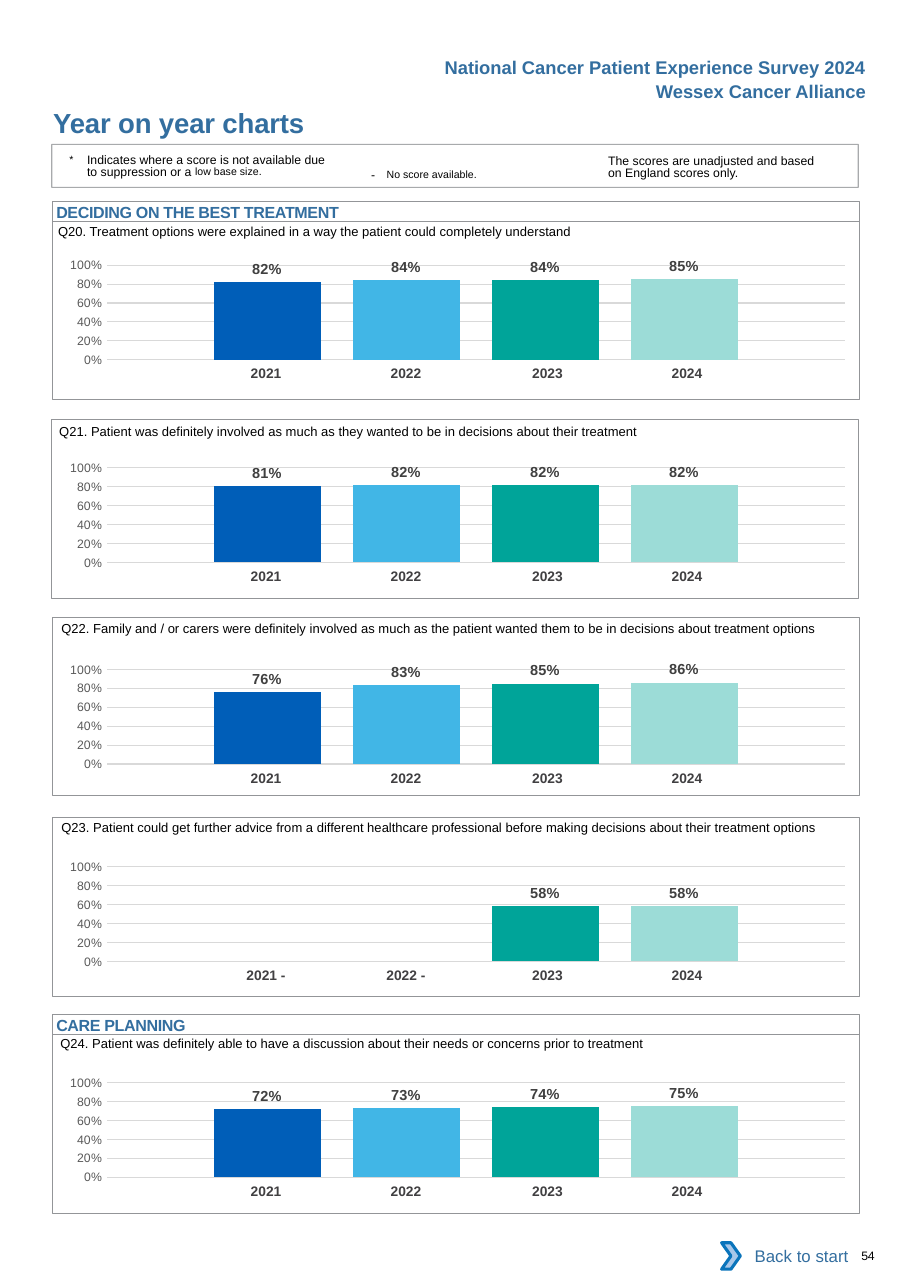
from dataclasses import dataclass
from typing import Optional

from pptx import Presentation, util as u
from pptx.chart.data import CategoryChartData
from pptx.dml.color import RGBColor
from pptx.enum import chart as charts, shapes, text
from pptx.oxml import parse_xml
from pptx.oxml.ns import nsdecls, qn

PAGE_WIDTH, PAGE_HEIGHT = u.Inches(8.26), u.Inches(11.69)
COLUMN, ROW = PAGE_WIDTH / 100, PAGE_HEIGHT / 100

BLACK = RGBColor(0, 0, 0)
WHITE = RGBColor(255, 255, 255)
HEADING = RGBColor(0x33, 0x6E, 0x9F)
FRAME = RGBColor(0x93, 0x95, 0x98)
YEAR = RGBColor(0x41, 0x40, 0x42)
LABEL = RGBColor(0x40, 0x40, 0x40)
AXIS = RGBColor(0x59, 0x59, 0x59)
GRID = RGBColor(0xD9, 0xD9, 0xD9)
CHEVRON_FILL = RGBColor(0xA8, 0xC7, 0xE9)
CHEVRON_LINE = RGBColor(0x0A, 0x74, 0xBB)
BARS = (RGBColor(0x00, 0x5E, 0xB8), RGBColor(0x41, 0xB6, 0xE6),
        RGBColor(0x00, 0xA4, 0x99), RGBColor(0x9C, 0xDC, 0xD7))

PANEL_WIDTH = 88.62
YEAR_COLUMNS = ((15.38, 0), (15.38, 0), (16.22, 3), (15.38, 8.6))
YEARS = ("2021", "2022", "2023", "2024")
NO_TABLE_STYLE = "{2D5ABB26-0587-4C30-8999-92F81FD0307C}"


@dataclass(frozen=True)
class Area:
    left: float
    top: float
    width: float
    height: float

    def emu(self) -> tuple[int, int, int, int]:
        return (round(self.left * COLUMN), round(self.top * ROW),
                round(self.width * COLUMN), round(self.height * ROW))


@dataclass(frozen=True)
class Span:
    text: str
    size: float
    bold: bool = False
    color: RGBColor = BLACK
    spacing: float = 0
    baseline: int = 0


@dataclass(frozen=True)
class Question:
    wording: str
    scores: tuple[Optional[float], ...]
    left: float
    top: float
    panel_left: float
    panel_top: float
    chart_top: float
    years: tuple[str, ...] = YEARS


QUESTIONS = (
    Question("Q20. Treatment options were explained in a way the patient could completely understand",
             (0.82, 0.84, 0.84, 0.85), 6.3, 16.6, 5.81, 17.19, 18.99),
    Question("Q21. Patient was definitely involved as much as they wanted to be in decisions about their treatment",
             (0.81, 0.82, 0.82, 0.82), 6.42, 32.08, 5.69, 32.59, 34.73),
    Question("Q22. Family and / or carers were definitely involved as much as the patient wanted them to be in "
             "decisions about treatment options",
             (0.76, 0.83, 0.85, 0.86), 6.66, 47.39, 5.81, 47.9, 50.38),
    Question("Q23. Patient could get further advice from a different healthcare professional before making "
             "decisions about their treatment options",
             (None, None, 0.58, 0.58), 6.66, 62.87, 5.81, 63.47, 65.7,
             ("2021 -", "2022 -", "2023", "2024")),
    Question("Q24. Patient was definitely able to have a discussion about their needs or concerns prior to treatment",
             (0.72, 0.73, 0.74, 0.75), 6.54, 79.64, 5.81, 80.33, 82.46),
)
SECTIONS = (("DECIDING ON THE BEST TREATMENT", 15.65), ("CARE PLANNING", 78.79))
BANNERS = (
    ("National Cancer Patient Experience Survey 2024", Area(47.46, 3.93, 48.91, 2.57)),
    ("Wessex Cancer Alliance", Area(70.58, 5.82, 25.79, 2.57)),
)


def style(font, size: float, color: RGBColor, bold: bool = False) -> None:
    font.name, font.size, font.bold = "Arial", u.Pt(size), bold
    font.color.rgb = color


def write(frame, spans: tuple[Span, ...], insets=(0, 0, 0, 0), align=text.PP_ALIGN.LEFT,
          anchor=text.MSO_ANCHOR.TOP, wrap=True, before: float = 0, line: Optional[float] = None,
          margin: float = 0, hanging: float = 0) -> None:
    frame.word_wrap, frame.vertical_anchor = wrap, anchor
    frame.auto_size = text.MSO_AUTO_SIZE.NONE
    frame.margin_left, frame.margin_top, frame.margin_right, frame.margin_bottom = map(u.Pt, insets)
    para = frame.paragraphs[0]
    para.alignment, para.space_before = align, u.Pt(before)
    if line:
        para.line_spacing = u.Pt(line)
    properties = para._p.get_or_add_pPr()
    properties.set("marL", str(u.Pt(margin)))
    properties.set("indent", str(u.Pt(-hanging)))
    for span in spans:
        run = para.add_run()
        run.text = span.text
        style(run.font, span.size, span.color, span.bold)
        run_properties = run._r.get_or_add_rPr()
        if span.spacing:
            run_properties.set("spc", str(round(span.spacing * 100)))
        if span.baseline:
            run_properties.set("baseline", str(span.baseline * 1000))


def add_text(page, area: Area, *spans: Span, **layout) -> None:
    write(page.shapes.add_textbox(*area.emu()).text_frame, spans, **layout)


def add_box(page, area: Area, line: Optional[RGBColor] = FRAME, weight: float = 0.5,
            fill: Optional[RGBColor] = None, kind=shapes.MSO_SHAPE.RECTANGLE):
    box = page.shapes.add_shape(kind, *area.emu())
    box.shadow.inherit = False
    if fill is None:
        box.fill.background()
    else:
        box.fill.solid()
        box.fill.fore_color.rgb = fill
    if line is None:
        box.line.fill.background()
    else:
        box.line.color.rgb, box.line.width = line, u.Pt(weight)
    return box


def add_scores(page, question: Question) -> None:
    data = CategoryChartData(number_format="0%")
    data.categories = ["1"]
    for number, score in enumerate(question.scores, 1):
        data.add_series(f"Series {number}", [score])
    area = Area(4.72, question.chart_top, PANEL_WIDTH, 11.04)
    chart = page.shapes.add_chart(charts.XL_CHART_TYPE.COLUMN_CLUSTERED, *area.emu(), data).chart
    chart.has_legend = chart.has_title = False
    chart.font.name, chart.font.size = "Calibri", u.Pt(10)
    chart.font.color.rgb = BLACK
    chart.category_axis.visible = False
    axis = chart.value_axis
    axis.minimum_scale, axis.maximum_scale, axis.major_unit = 0, 1, 0.2
    axis.major_tick_mark = axis.minor_tick_mark = charts.XL_TICK_MARK.NONE
    axis.format.line.fill.background()
    axis.major_gridlines.format.line.color.rgb = GRID
    axis.major_gridlines.format.line.width = u.Pt(0.75)
    axis.tick_labels.number_format, axis.tick_labels.number_format_is_linked = "0%", False
    style(axis.tick_labels.font, 8, AXIS)
    plot = chart.plots[0]
    plot.vary_by_categories, plot.gap_width, plot.overlap = False, 200, -30
    for series, color in zip(plot.series, BARS):
        series.format.fill.solid()
        series.format.fill.fore_color.rgb = color
        labels = series.data_labels
        labels.show_value, labels.position = True, charts.XL_LABEL_POSITION.OUTSIDE_END
        labels.number_format, labels.number_format_is_linked = "0%", False
        style(labels.font, 9.5, LABEL, True)
    plot_area = chart._chartSpace.chart.plotArea
    for layout in plot_area.findall(qn("c:layout")):
        plot_area.remove(layout)
    shares = "".join(f'<c:{name} val="{share}"/>' for name, share in
                     (("x", 0.079), ("y", 0.145), ("w", 0.915), ("h", 0.666)))
    plot_area.insert(0, parse_xml(
        f'<c:layout {nsdecls("c")}><c:manualLayout><c:layoutTarget val="inner"/>'
        f'<c:xMode val="edge"/><c:yMode val="edge"/>{shares}</c:manualLayout></c:layout>'))


def add_years(page, question: Question) -> None:
    area = Area(20.94, question.chart_top + 9.02, sum(width for width, _ in YEAR_COLUMNS), 2.31)
    holder = page.shapes.add_table(1, len(YEAR_COLUMNS), *area.emu())
    table = holder.table
    table.first_row = table.horz_banding = False
    next(holder._element.iter(qn("a:tableStyleId"))).text = NO_TABLE_STYLE
    for index, (width, right) in enumerate(YEAR_COLUMNS):
        table.columns[index].width = round(width * COLUMN)
        cell = table.cell(0, index)
        cell.fill.background()
        cell.margin_left, cell.margin_right = u.Pt(7.2), u.Pt(right)
        para = cell.text_frame.paragraphs[0]
        para.text, para.alignment = question.years[index], text.PP_ALIGN.CENTER
        style(para.runs[0].font, 9, YEAR, True)


def add_notes(page) -> None:
    add_text(page, Area(66.83, 11.8, 23.8, 2.31),
             Span("The scores are unadjusted and based on England scores only.", 8),
             insets=(0, 2.2, 0, 0), before=2.5, line=8.1)
    add_text(page, Area(39.59, 12.06, 22.15, 2.05), Span("- ", 8, spacing=2.6),
             Span("No score available.", 12, baseline=3), insets=(7.2, 3.6, 7.2, 3.6), before=2.1)
    add_text(page, Area(7.63, 11.8, 28.7, 2.31), Span("*\t", 12, baseline=3),
             Span("Indicates where a score is not available due to suppression or a ", 8),
             Span("low base size.", 12, baseline=7),
             insets=(0, 2.2, 0, 0), before=2.5, line=8.1, margin=11.5, hanging=11.5)
    box = add_box(page, Area(5.69, 11.21, PANEL_WIDTH, 3.34), weight=0.75)
    color = next(box.line._ln.iter(qn("a:srgbClr")))
    color.append(parse_xml(f'<a:alpha {nsdecls("a")} val="80000"/>'))


def main() -> None:
    deck = Presentation()
    deck.slide_width, deck.slide_height = PAGE_WIDTH, PAGE_HEIGHT
    page = deck.slides.add_slide(deck.slide_layouts[5])
    title = page.shapes.title
    title.left, title.top, title.width, title.height = Area(5.69, 8.21, 54.48, 2.57).emu()
    write(title.text_frame, (Span("Year on year charts", 18, True, HEADING, -0.1),),
          before=4.1, margin=0.9)
    for question in QUESTIONS:
        add_years(page, question)
        add_scores(page, question)
        add_box(page, Area(question.panel_left, question.panel_top, PANEL_WIDTH, 13.86))
        add_text(page, Area(question.left, question.top, 87.65, 2.05), Span(question.wording, 8.5),
                 insets=(0, 6.5, 0, 0), before=6.8, margin=0.5)
    for heading, top in SECTIONS:
        box = add_box(page, Area(5.81, top, PANEL_WIDTH, 1.54))
        write(box.text_frame, (Span(heading, 10.5, True, HEADING, -0.2),),
              insets=(0, 0.7, 0, 0), before=0.5, margin=2.2)
    add_notes(page)
    for wording, area in BANNERS:
        add_text(page, area, Span(wording, 12, True, HEADING), insets=(7.2, 3.6, 7.2, 3.6),
                 align=text.PP_ALIGN.RIGHT, wrap=False)
    back = add_box(page, Area(80.15, 95.72, 14.29, 3.59), line=None, fill=WHITE)
    write(back.text_frame, (Span("Back to start", 11, color=HEADING),), insets=(7.2, 3.6, 7.2, 3.6),
          align=text.PP_ALIGN.RIGHT, anchor=text.MSO_ANCHOR.MIDDLE)
    add_box(page, Area(79.3, 96.49, 2.06, 2.05), CHEVRON_LINE, 2, CHEVRON_FILL, shapes.MSO_SHAPE.CHEVRON)
    add_text(page, Area(93.46, 96.92, 6.17, 1.11), Span("54", 8, spacing=-0.2), before=0.2, margin=7.2)
    deck.save("out.pptx")


if __name__ == "__main__":
    main()
